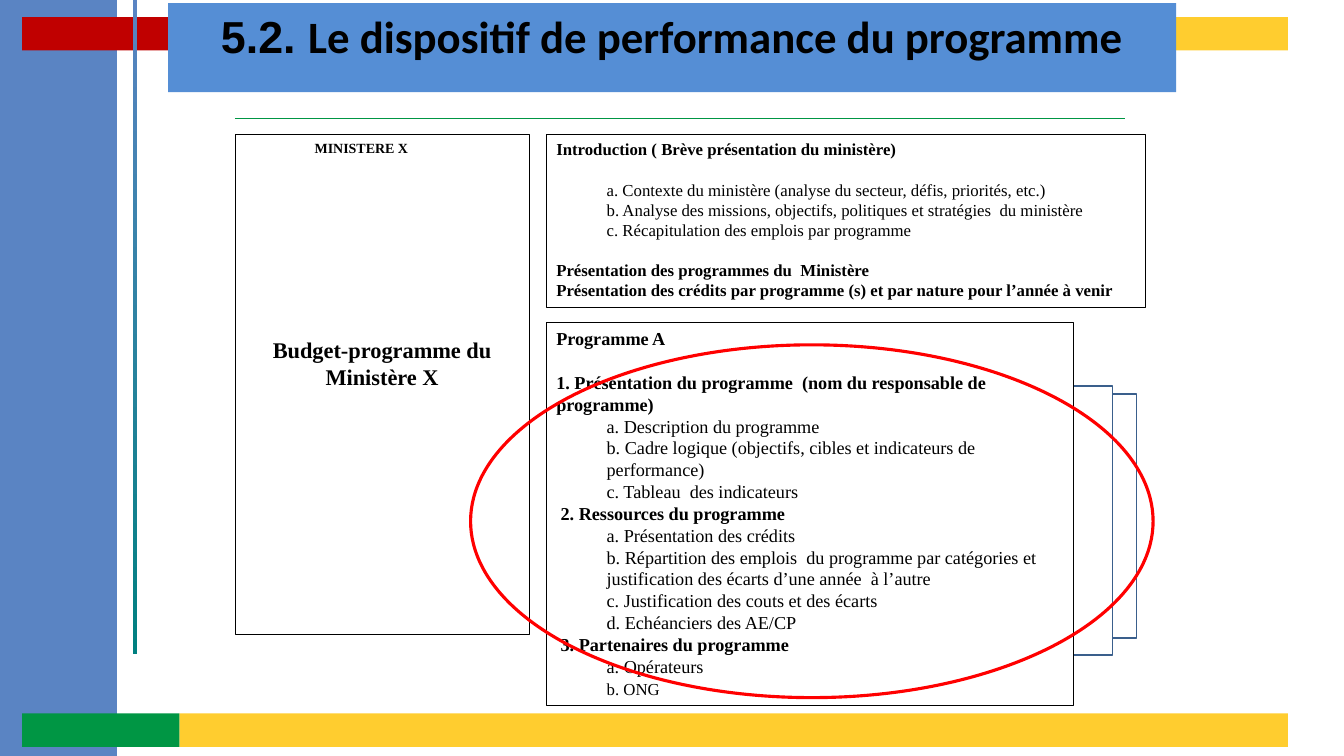
from dataclasses import dataclass
from typing import Optional

from lxml.etree import SubElement
from pptx import Presentation
from pptx.dml.color import RGBColor
from pptx.enum.shapes import MSO_CONNECTOR, MSO_SHAPE
from pptx.enum.text import MSO_ANCHOR, MSO_AUTO_SIZE, PP_ALIGN
from pptx.oxml.ns import qn
from pptx.util import Cm, Pt

COLORS = {
    "black": "000000", "white": "FFFFFF", "sidebar": "5A84C3", "teal": "008080",
    "yellow": "FFCD2F", "green": "009644", "dark red": "C00000",
    "card line": "3A5F8C", "red": "FF0000", "title": "558ED5",
}
SERIF = "Times New Roman"
SUB_INDENT = 1.27
HEAD_INDENT = 0.11


@dataclass
class Panel:
    """A shape; lengths in centimetres, line width in points."""
    left: float
    top: float
    width: float
    height: float
    fill: Optional[str] = None
    line: Optional[str] = None
    line_width: float = 0.75
    kind: MSO_SHAPE = MSO_SHAPE.RECTANGLE


@dataclass
class Line:
    """A paragraph of a panel; indent in centimetres, space before in points."""
    text: str
    bold: bool = False
    indent: float = 0
    before: float = 0
    size: Optional[float] = None


def color(name: str) -> RGBColor:
    return RGBColor.from_string(COLORS[name])


def add_panel(slide, panel: Panel):
    shape = slide.shapes.add_shape(
        panel.kind, Cm(panel.left), Cm(panel.top), Cm(panel.width), Cm(panel.height))
    shape.shadow.inherit = False
    if panel.fill:
        shape.fill.solid()
        shape.fill.fore_color.rgb = color(panel.fill)
    else:
        shape.fill.background()
    if panel.line:
        shape.line.color.rgb = color(panel.line)
        shape.line.width = Pt(panel.line_width)
    else:
        shape.line.fill.background()
    return shape


def add_run(paragraph, text: str, *, size: float, font: str = SERIF, bold: bool = False) -> None:
    run = paragraph.add_run()
    run.text = text
    run.font.name = font
    run.font.size = Pt(size)
    run.font.bold = bold
    run.font.color.rgb = color("black")


def write_lines(shape, lines: list[Line], *, size: float, spacing: Optional[float] = None,
                align: PP_ALIGN = PP_ALIGN.LEFT) -> None:
    frame = shape.text_frame
    frame.word_wrap = True
    frame.vertical_anchor = MSO_ANCHOR.TOP
    for index, line in enumerate(lines):
        paragraph = frame.add_paragraph() if index else frame.paragraphs[0]
        paragraph.alignment = align
        if line.before:
            paragraph.space_before = Pt(line.before)
        if spacing:
            paragraph.line_spacing = Pt(spacing)
        if line.indent:
            paragraph._p.get_or_add_pPr().set("marL", str(Cm(line.indent)))
        add_run(paragraph, line.text, size=line.size or size, bold=line.bold)


def sub(text: str, before: float = 0, size: Optional[float] = None) -> Line:
    return Line(text, indent=SUB_INDENT, before=before, size=size)


BARS = [
    Panel(0, 0, 2.95, 19.05, "sidebar"),
    Panel(4.52, 17.98, 27.94, 0.84, "yellow"),
    Panel(0.56, 17.98, 3.96, 0.84, "green"),
    Panel(0.56, 0.43, 24.28, 0.84, "dark red"),
    Panel(24.84, 0.43, 7.62, 0.84, "yellow"),
]
ROD = Panel(3.35, 0, 0.1, 16.48, "teal")
STACKED_CARDS = [
    Panel(17.93, 9.93, 10.72, 6.15, "white", "card line", 1),
    Panel(17.35, 9.73, 10.69, 6.78, "white", "card line", 1),
]
MINISTRY = Panel(5.92, 3.38, 7.42, 12.6, line="black", line_width=0.25)
PROGRAMME = Panel(13.77, 8.13, 13.28, 9.65, "white", "black")
INTRODUCTION = Panel(13.77, 3.38, 15.09, 4.37, line="black")
HIGHLIGHT = Panel(11.86, 8.69, 17.2, 8.89, line="red", line_width=2.25, kind=MSO_SHAPE.OVAL)

PROGRAMME_LINES = [
    Line("Programme A", True),
    Line("1. Présentation du programme  (nom du responsable de programme)", True, before=15.6),
    sub("a. Description du programme"),
    sub("b. Cadre logique (objectifs, cibles et indicateurs de performance)"),
    sub("c. Tableau  des indicateurs"),
    Line("2. Ressources du programme", True, HEAD_INDENT),
    sub("a. Présentation des crédits"),
    sub("b. Répartition des emplois  du programme par catégories et "
        "justification des écarts d’une année  à l’autre"),
    sub("c. Justification des couts et des écarts"),
    sub("d. Echéanciers des AE/CP"),
    Line("3. Partenaires du programme", True, HEAD_INDENT),
    sub("a. Opérateurs"),
    sub("b. ONG", size=12),
]
INTRODUCTION_LINES = [
    Line("Introduction ( Brève présentation du ministère)", True),
    sub("a. Contexte du ministère (analyse du secteur, défis, priorités, etc.)", before=14.4),
    sub("b. Analyse des missions, objectifs, politiques et stratégies  du ministère"),
    sub("c. Récapitulation des emplois par programme"),
    Line("Présentation des programmes du  Ministère", True, before=14.4),
    Line("Présentation des crédits par programme (s) et par nature pour l’année à venir", True),
]


def add_title(slide) -> None:
    title = slide.shapes.title
    title.left, title.top, title.width, title.height = Cm(4.24), Cm(0.08), Cm(25.4), Cm(2.24)
    title.fill.solid()
    title.fill.fore_color.rgb = color("title")
    frame = title.text_frame
    frame.auto_size = MSO_AUTO_SIZE.NONE
    frame.vertical_anchor = MSO_ANCHOR.TOP
    paragraph = frame.paragraphs[0]
    paragraph.alignment = PP_ALIGN.CENTER
    add_run(paragraph, "5.2. ", size=32, font="Arial", bold=True)
    add_run(paragraph, "Le dispositif de performance du programme",
            size=32, font="Calibri", bold=True)
    # Bring the title in front of the coloured bars
    slide.shapes._spTree.append(title.element)


def main() -> None:
    presentation = Presentation()
    presentation.slide_width, presentation.slide_height = Cm(33.87), Cm(19.05)
    slide = presentation.slides.add_slide(presentation.slide_layouts[5])

    # Coloured frame
    for bar in BARS:
        add_panel(slide, bar)
    rod = add_panel(slide, ROD)
    rod.fill.gradient()
    rod.fill.gradient_angle = 90
    for stop, name in zip(rod.fill.gradient_stops, ("teal", "sidebar")):
        stop.color.rgb = color(name)

    # Cards behind the programme box
    for card in STACKED_CARDS:
        add_panel(slide, card)

    # Green rule under the title
    rule = slide.shapes.add_connector(
        MSO_CONNECTOR.STRAIGHT, Cm(5.92), Cm(2.97), Cm(28.36), Cm(2.97))
    rule.line.color.rgb = color("green")
    rule.line.width = Pt(0.5)
    SubElement(rule.element.spPr, qn("a:effectLst"))

    # Text boxes
    ministry = add_panel(slide, MINISTRY)
    write_lines(ministry, [Line("MINISTERE X", True, indent=1.76)], size=10)
    budget = ministry.text_frame.add_paragraph()
    budget.alignment = PP_ALIGN.CENTER
    budget.space_before = Pt(129)
    budget.line_spacing = Pt(19)
    add_run(budget, "Budget-programme du Ministère X", size=16, bold=True)
    write_lines(add_panel(slide, PROGRAMME), PROGRAMME_LINES, size=13, spacing=15.6)
    write_lines(add_panel(slide, INTRODUCTION), INTRODUCTION_LINES, size=12, spacing=14.4)

    # Red highlight and title
    add_panel(slide, HIGHLIGHT)
    add_title(slide)
    presentation.save("out.pptx")


if __name__ == "__main__":
    main()
